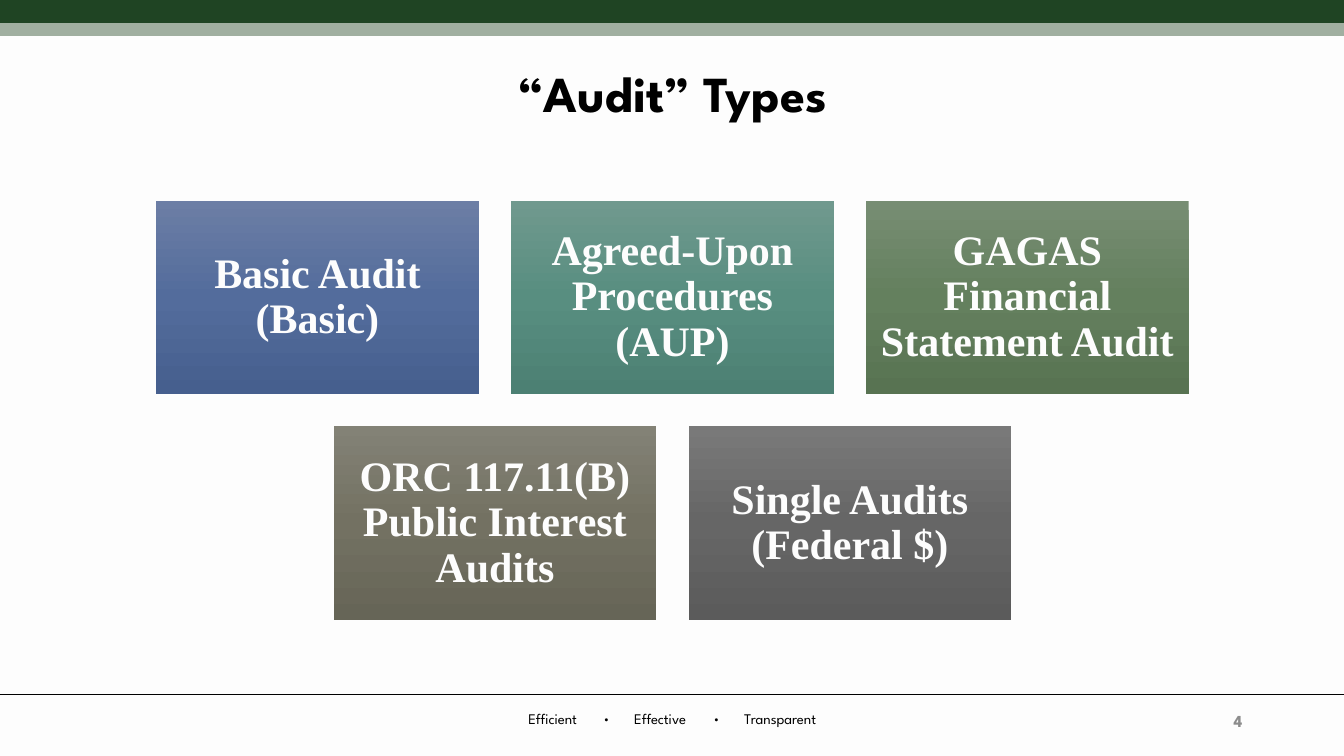
import copy
from dataclasses import dataclass

import pptx
import pptx.dml.color
import pptx.enum.shapes
import pptx.enum.text
import pptx.oxml.ns
import pptx.util
from lxml import etree

Inches = pptx.util.Inches
Pt = pptx.util.Pt
RGB = pptx.dml.color.RGBColor.from_string
qn = pptx.oxml.ns.qn
ALIGN = pptx.enum.text.PP_ALIGN
MIDDLE = pptx.enum.text.MSO_ANCHOR.MIDDLE


@dataclass(frozen=True)
class Theme:
    background: str = "FDFDFD"
    dark_green: str = "1F4423"
    pale_green: str = "A0AFA0"
    black: str = "000000"
    grey: str = "8C8C8C"
    card_text: str = "FDFDFD"
    sans: str = "League Spartan"
    serif: str = "Times New Roman"
    title_size: float = 36
    card_size: float = 30
    footer_size: float = 10.5
    number_size: float = 12


THEME = Theme()
WIDTH, HEIGHT = 13.33, 7.5
CARD_ROWS = [
    [
        ("Basic Audit (Basic)", ("6C7EA5", "536C9C", "465F8E")),
        ("Agreed-Upon Procedures (AUP)", ("70998E", "588E80", "4C8073")),
        ("GAGAS Financial Statement Audit", ("778D73", "64805E", "587352")),
    ],
    [
        ("ORC 117.11(B) Public Interest Audits", ("838276", "737162", "666557")),
        ("Single Audits (Federal $)", ("797979", "666666", "5B5B5B")),
    ],
]


def set_text(sp, text, size, font, color, bold, align, inset=(0.1, 0.05), spacing=1.0):
    tf = sp.text_frame
    x, y = map(Inches, inset)
    frame = dict(word_wrap=True, vertical_anchor=MIDDLE, margin_left=x,
                 margin_right=x, margin_top=y, margin_bottom=y)
    for name, value in frame.items():
        setattr(tf, name, value)
    p = tf.paragraphs[0]
    p.alignment = align
    p.line_spacing = spacing
    r = p.add_run()
    r.text = text
    for name, value in dict(size=Pt(size), name=font, bold=bold).items():
        setattr(r.font, name, value)
    r.font.color.rgb = RGB(color)
    return p


def add_text(s, box, *args, **kwargs):
    sp = s.shapes.add_textbox(*map(Inches, box))
    return set_text(sp, *args, **kwargs)


def add_rule(s, y, color, weight):
    line = s.shapes.add_connector(
        pptx.enum.shapes.MSO_CONNECTOR.STRAIGHT,
        0, Inches(y), Inches(WIDTH), Inches(y))
    line.line.color.rgb = RGB(color)
    line.line.width = Pt(weight)
    etree.SubElement(line._element.spPr, qn("a:effectLst"))


def fill_gradient(sp, colors):
    sp.fill.gradient()
    sp.fill.gradient_angle = 270
    stop_list = sp._element.spPr.find(qn("a:gradFill")).find(qn("a:gsLst"))
    stop_list.append(copy.deepcopy(stop_list[-1]))
    for i, (stop, color) in enumerate(zip(sp.fill.gradient_stops, colors)):
        stop.position = i / (len(colors) - 1)
        stop.color.rgb = RGB(color)


def add_header(s, box):
    x, y, w, h = box
    add_rule(s, y + 0.1, THEME.dark_green, 18)
    add_rule(s, y + 0.29, THEME.pale_green, 9)
    add_text(s, (x + 0.92, y + 0.4, w - 1.83, h - 0.4), "“Audit” Types",
             THEME.title_size, THEME.sans, THEME.black, True, ALIGN.CENTER, spacing=0.9)


def add_card(s, box, text, colors):
    sp = s.shapes.add_shape(pptx.enum.shapes.MSO_SHAPE.RECTANGLE, *map(Inches, box))
    sp.shadow.inherit = False
    sp.line.fill.background()
    fill_gradient(sp, colors)
    set_text(sp, text, THEME.card_size, THEME.serif, THEME.card_text, True,
             ALIGN.CENTER, inset=(0.12, 0.12), spacing=0.9)


def add_cards(s, box, rows, gap=0.32):
    x, y, w, h = box
    columns = max(map(len, rows))
    card_w = (w - gap * (columns - 1)) / columns
    card_h = (h - gap * (len(rows) - 1)) / len(rows)
    for i, row in enumerate(rows):
        left = x + (w - len(row) * (card_w + gap) + gap) / 2
        for j, (text, colors) in enumerate(row):
            card = (left + j * (card_w + gap), y + i * (card_h + gap), card_w, card_h)
            add_card(s, card, text, colors)


def add_footer(s, box):
    x, y, w, h = box
    add_rule(s, y, THEME.black, 0.5)
    p = add_text(s, (x + 5.24, y + 0.1, 3, 0.28),
                 "Efficient\t•\tEffective\t•\tTransparent", THEME.footer_size,
                 THEME.sans, THEME.black, False, ALIGN.LEFT, inset=(0, 0.05))
    tabs = etree.SubElement(p._p.get_or_add_pPr(), qn("a:tabLst"))
    for stop in (0.74, 1.05, 1.83, 2.14):
        etree.SubElement(tabs, qn("a:tab"), pos=str(Inches(stop)), algn="l")
    add_text(s, (x + w - 3.91, y + 0.06, 3, 0.4), "4", THEME.number_size,
             THEME.sans, THEME.grey, True, ALIGN.RIGHT)


def build_audit_types(prs):
    s = prs.slides.add_slide(prs.slide_layouts[6])
    s.background.fill.solid()
    s.background.fill.fore_color.rgb = RGB(THEME.background)
    add_header(s, (0, 0, WIDTH, 1.5))
    add_cards(s, (1.55, 1.99, 10.24, 4.16), CARD_ROWS)
    add_footer(s, (0, 6.89, WIDTH, HEIGHT - 6.89))


def main():
    prs = pptx.Presentation()
    prs.slide_width = Inches(WIDTH)
    prs.slide_height = Inches(HEIGHT)
    build_audit_types(prs)
    prs.save("out.pptx")


if __name__ == "__main__":
    main()
